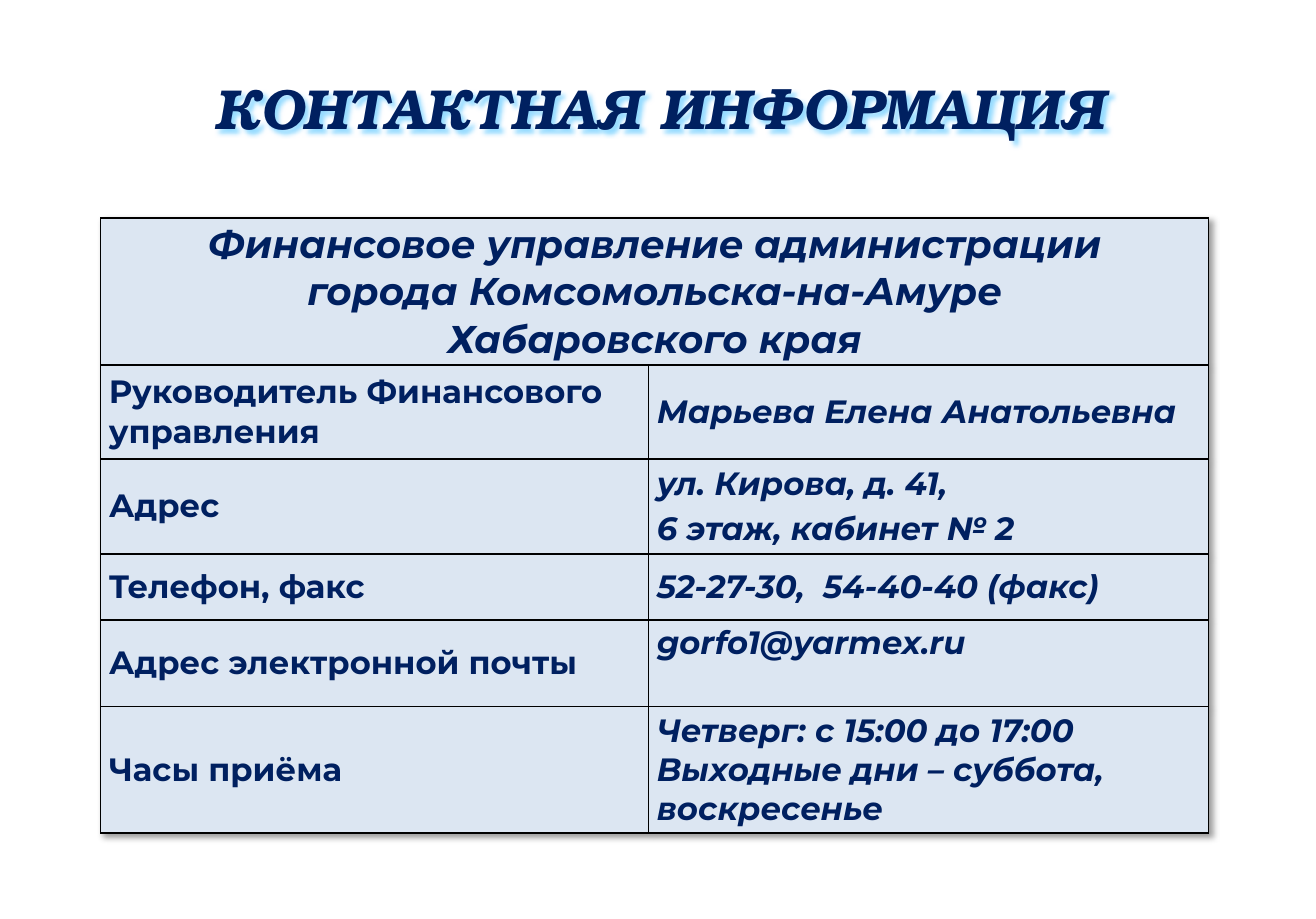
from lxml.etree import SubElement
from pptx import Presentation
from pptx.dml.color import RGBColor
from pptx.enum.text import MSO_ANCHOR as Anchor, PP_ALIGN as Align
from pptx.oxml import parse_xml
from pptx.oxml.ns import nsdecls, qn
from pptx.util import Inches, Pt

TITLE = "КОНТАКТНАЯ ИНФОРМАЦИЯ"
OFFICE = [
    "Финансовое управление администрации",
    "города Комсомольска-на-Амуре",
    "Хабаровского края",
]
CONTACTS = [
    ("Руководитель Финансового управления", ["Марьева Елена Анатольевна"], 0, Anchor.MIDDLE),
    ("Адрес", ["ул. Кирова, д. 41,", "6 этаж, кабинет № 2"], 4, Anchor.MIDDLE),
    ("Телефон, факс", ["52-27-30,  54-40-40 (факс)"], 0, Anchor.MIDDLE),
    ("Адрес электронной почты", ["gorfo1@yarmex.ru"], 0, Anchor.TOP),
    ("Часы приёма", ["Четверг: с 15:00 до 17:00", "Выходные дни – суббота, воскресенье"], 0, Anchor.MIDDLE),
]

WIDTH, HEIGHT = 11.36, 7.93
COLUMNS = [4.73, 4.83]
ROWS = [1.27, 0.81, 0.82, 0.57, 0.75, 1.09]
TABLE_LEFT, TABLE_TOP = 0.87, 1.88
TITLE_BOX = (0.99, 0.58, 9.41, 0.69)

NAVY = RGBColor(0x00, 0x20, 0x60)
PALE_BLUE = RGBColor(0xDC, 0xE6, 0xF2)
BLACK = RGBColor(0x00, 0x00, 0x00)
SKY = RGBColor(0x8C, 0xD8, 0xFF)
BODY_FONT, TITLE_FONT = "Montserrat", "TeX Gyre Bonum"


def write(frame, lines, size, font=BODY_FONT, italic=True, align=Align.LEFT, gap=0):
    frame.word_wrap = True
    for index, line in enumerate(lines):
        para = frame.add_paragraph() if index else frame.paragraphs[0]
        para.text = line
        para.alignment = align
        if index and gap:
            para.space_before = Pt(gap)
        para.font.name, para.font.size = font, Pt(size)
        para.font.bold, para.font.italic = True, italic
        para.font.color.rgb = NAVY


def shadow(color, opacity, blur, distance):
    return parse_xml(
        f'<a:effectLst {nsdecls("a")}><a:outerShdw blurRad="{Pt(blur)}" dist="{Pt(distance)}" '
        f'dir="2700000" algn="tl" rotWithShape="0"><a:srgbClr val="{color}">'
        f'<a:alpha val="{opacity * 1000}"/></a:srgbClr></a:outerShdw></a:effectLst>'
    )


def style_cell(cell, anchor=Anchor.MIDDLE):
    cell.margin_left = cell.margin_right = Inches(0.07)
    cell.margin_top = cell.margin_bottom = Inches(0.03)
    cell.vertical_anchor = anchor
    props = cell._tc.get_or_add_tcPr()
    for side in ("lnL", "lnR", "lnT", "lnB"):
        line = SubElement(props, qn(f"a:{side}"), w=str(Pt(1)))
        fill = SubElement(line, qn("a:solidFill"))
        SubElement(fill, qn("a:srgbClr"), val=str(BLACK))
    cell.fill.solid()
    cell.fill.fore_color.rgb = PALE_BLUE


def add_title(page):
    box = page.shapes.add_textbox(*map(Inches, TITLE_BOX))
    write(box.text_frame, [TITLE], 35, TITLE_FONT, align=Align.CENTER)
    box._element.spPr.append(shadow(SKY, 90, 3, 3))


def add_contacts(page):
    frame = page.shapes.add_table(
        len(ROWS), len(COLUMNS), Inches(TABLE_LEFT), Inches(TABLE_TOP),
        Inches(sum(COLUMNS)), Inches(sum(ROWS)),
    )
    table = frame.table
    table.first_row = table.horz_banding = False
    table._tbl.tblPr.insert(0, shadow(BLACK, 40, 4, 3))
    for column, width in zip(table.columns, COLUMNS):
        column.width = Inches(width)
    for row, height in zip(table.rows, ROWS):
        row.height = Inches(height)
    for cell in table.iter_cells():
        style_cell(cell)

    header = table.cell(0, 0)
    header.merge(table.cell(0, 1))
    write(header.text_frame, OFFICE, 24, align=Align.CENTER)
    for index, (label, lines, gap, anchor) in enumerate(CONTACTS, 1):
        write(table.cell(index, 0).text_frame, [label], 20, italic=False)
        value = table.cell(index, 1)
        value.vertical_anchor = anchor
        write(value.text_frame, lines, 20, gap=gap)


def main():
    deck = Presentation()
    deck.slide_width, deck.slide_height = Inches(WIDTH), Inches(HEIGHT)
    page = deck.slides.add_slide(deck.slide_layouts[6])
    add_title(page)
    add_contacts(page)
    deck.save("out.pptx")


if __name__ == "__main__":
    main()
